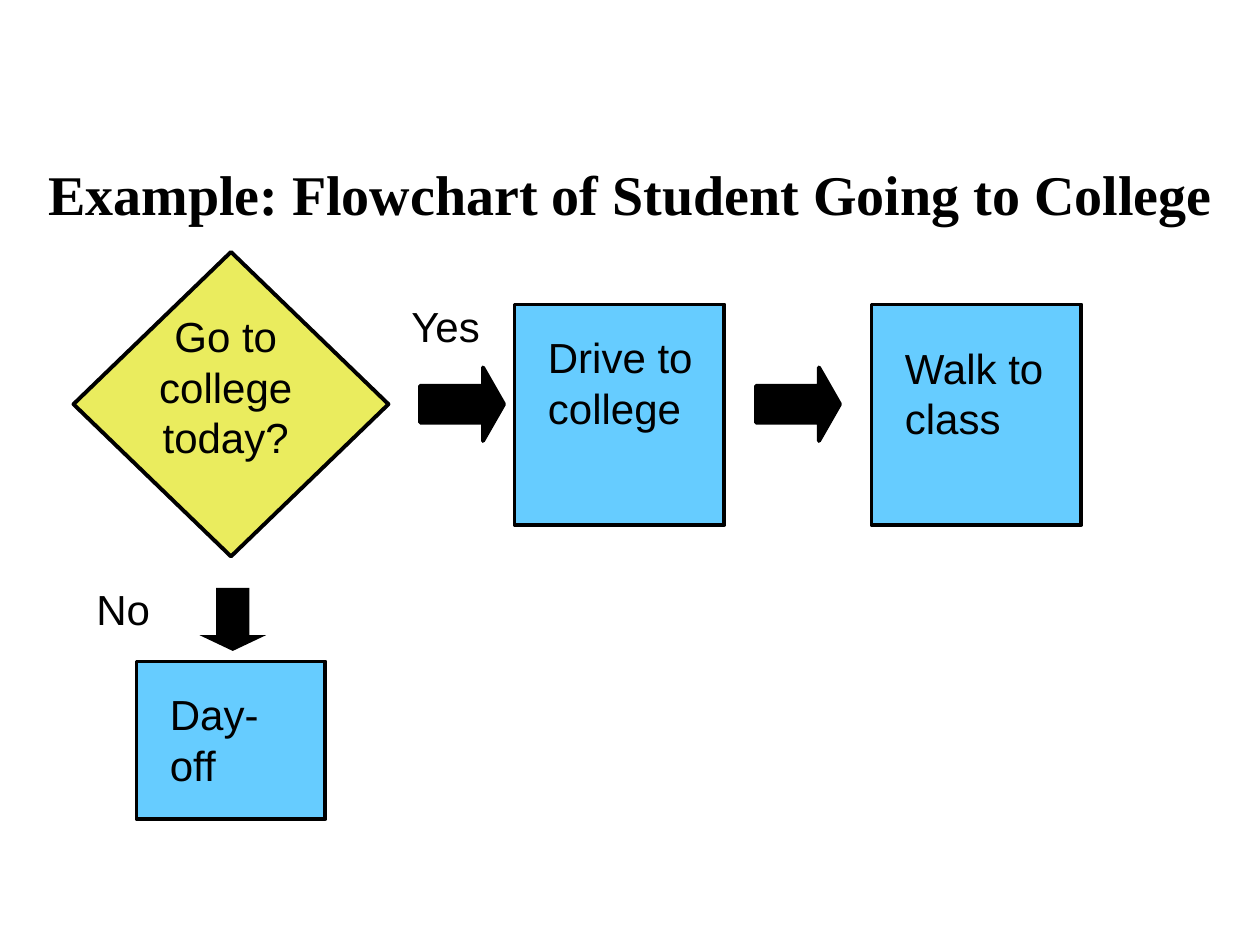
import pptx
import pptx.util
import pptx.dml.color
import pptx.enum.shapes
import pptx.enum.text

Pt = pptx.util.Pt
SHAPE = pptx.enum.shapes.MSO_SHAPE
ALIGN = pptx.enum.text.PP_ALIGN
ANCHOR = pptx.enum.text.MSO_ANCHOR

BLACK = pptx.dml.color.RGBColor(0x00, 0x00, 0x00)
YELLOW = pptx.dml.color.RGBColor(0xEA, 0xEC, 0x5E)
BLUE = pptx.dml.color.RGBColor(0x66, 0xCC, 0xFF)

deck = pptx.Presentation()
deck.slide_width, deck.slide_height = Pt(720), Pt(540)
slide = deck.slides.add_slide(deck.slide_layouts[6])


def add_text(text, left, top, width, height, size=24, font="Arial", bold=False,
             align=ALIGN.LEFT, anchor=ANCHOR.TOP, space_before=15):
    box = slide.shapes.add_textbox(Pt(left), Pt(top), Pt(width), Pt(height))
    frame = box.text_frame
    frame.word_wrap = True
    frame.vertical_anchor = anchor
    paragraph = frame.paragraphs[0]
    paragraph.alignment = align
    paragraph.space_before = Pt(space_before)
    run = paragraph.add_run()
    run.text = text
    run.font.size = Pt(size)
    run.font.name = font
    run.font.bold = bold
    run.font.color.rgb = BLACK


def add_step(kind, fill, left, top, width, height, outlined=True):
    step = slide.shapes.add_shape(kind, Pt(left), Pt(top), Pt(width), Pt(height))
    step.shadow.inherit = False
    step.fill.solid()
    step.fill.fore_color.rgb = fill
    if outlined:
        step.line.color.rgb = BLACK
        step.line.width = Pt(2.25)
    else:
        step.line.fill.background()
    return step


add_text("Example: Flowchart of Student Going to College", 14.4, 63.4, 692, 93.6,
         size=32, font="Times New Roman", bold=True, align=ALIGN.CENTER,
         anchor=ANCHOR.MIDDLE, space_before=0)

# Decision and its two branches
add_step(SHAPE.FLOWCHART_DECISION, YELLOW, 42, 144, 180, 174)
add_text("Go to college today?", 72, 174, 114, 95, align=ALIGN.CENTER)
add_text("Yes", 228, 168, 66, 36)
add_text("No", 48, 330, 60, 36)

# Yes branch
for arrow_left in (240, 432):
    arrow = add_step(SHAPE.RIGHT_ARROW, BLACK, arrow_left, 210, 48, 42)
    arrow.adjustments[1] = 0.286
for box_left in (294, 498):
    add_step(SHAPE.RECTANGLE, BLUE, box_left, 174, 120, 126)
add_text("Drive to college", 306, 186, 120, 65.5)
add_text("Walk to class", 510, 192, 102, 65)

# No branch
down_arrow = add_step(SHAPE.DOWN_ARROW, BLACK, 114, 336, 38, 36, outlined=False)
down_arrow.adjustments[1] = 0.25
add_step(SHAPE.RECTANGLE, BLUE, 78, 378, 108, 90)
add_text("Day- off", 90, 390, 84, 65.5)

deck.save("out.pptx")
